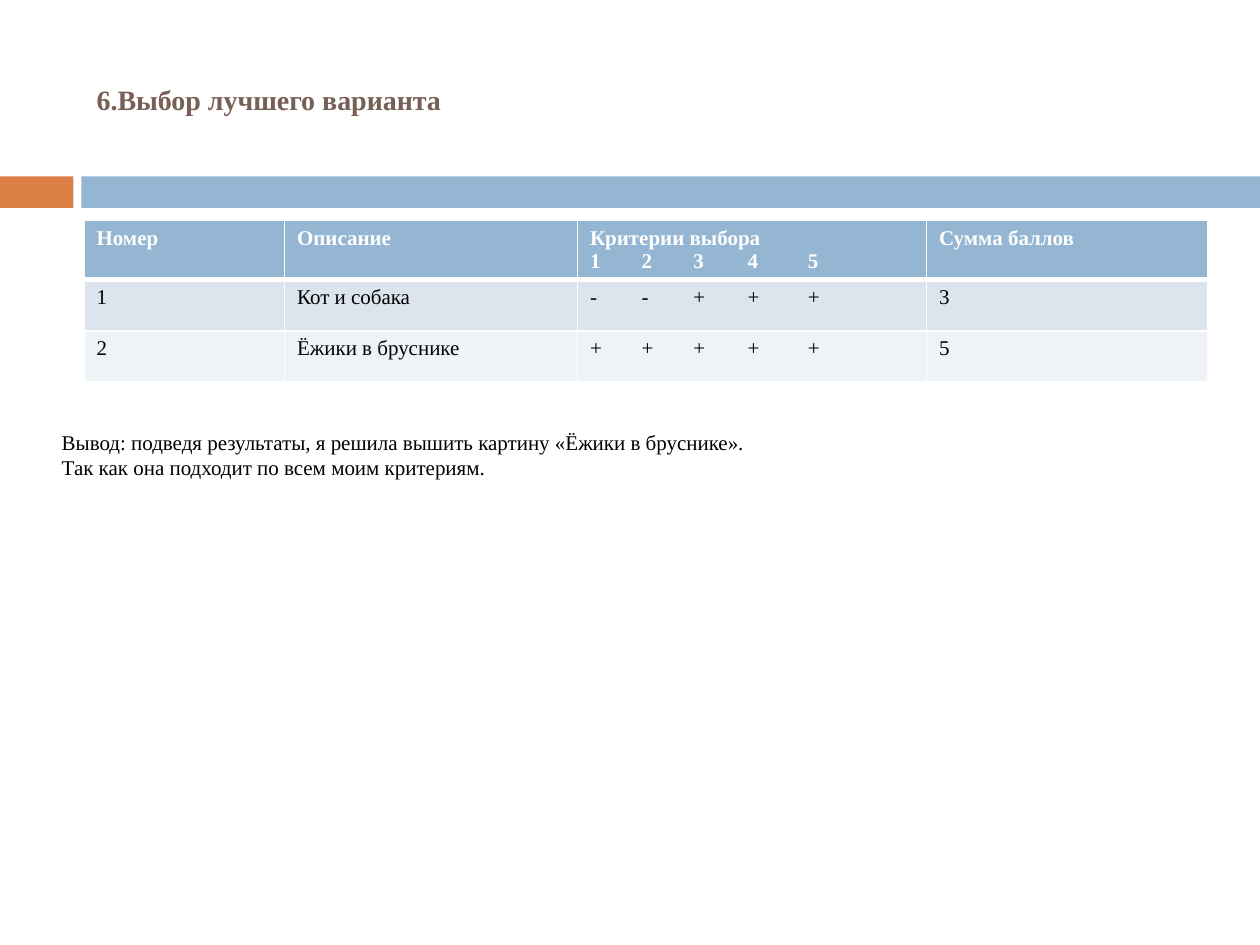
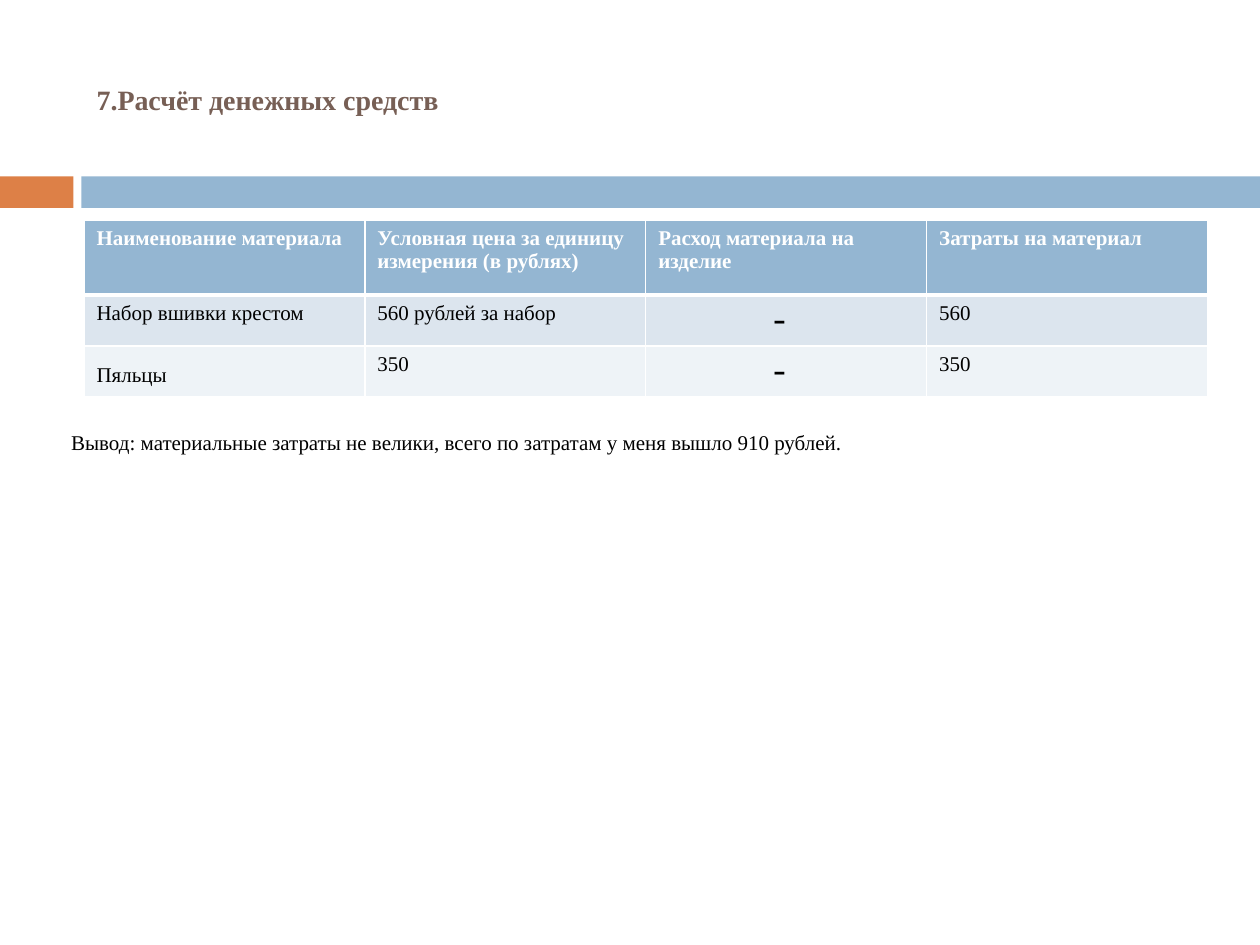
from dataclasses import dataclass
from typing import NamedTuple

from lxml import etree
from pptx import Presentation
from pptx.dml.color import RGBColor
from pptx.enum.shapes import MSO_SHAPE
from pptx.enum.text import MSO_ANCHOR, MSO_AUTO_SIZE, PP_ALIGN
from pptx.oxml.ns import qn
from pptx.util import Emu, Inches, Pt

RECTANGLE = MSO_SHAPE.RECTANGLE
MIDDLE = MSO_ANCHOR.MIDDLE
GROW = MSO_AUTO_SIZE.SHAPE_TO_FIT_TEXT
LEFT = PP_ALIGN.LEFT

# The slide is a grid of 120 columns by 90 rows, each a twelfth of an inch.
COLUMNS, ROWS = 120, 90
CELL = Inches(10) // COLUMNS

ORANGE, BLUE, BROWN = "DD8047", "94B6D2", "775F55"
WHITE, BLACK = "FFFFFF", "000000"
ROW_FILLS = ["DCE5EE", "EEF3F7"]

SERIF, SANS = "Times New Roman", "Cabin"
TITLE_FORMAT = {"name": SERIF, "size": Pt(16), "bold": True}
HEADER_FORMAT = {"name": SERIF, "size": Pt(12), "bold": True}
BODY_FORMAT = {"name": SERIF, "size": Pt(12), "bold": False}
SANS_FORMAT = {"name": SANS, "size": Pt(18), "bold": False}

CRITERIA_TABS = [0.41, 0.82, 1.25, 1.73]
DASH_INDENT = 0.91
THIN, THICK = 1, 3


class Area(NamedTuple):
    """A place on the grid, in columns and rows."""
    left: float
    top: float
    width: float
    height: float


class Band(NamedTuple):
    area: Area
    color: str


@dataclass
class Topic:
    title: str
    column_widths: list[float]
    header_height: float
    table_rows: list[list[str]]
    conclusion: list[str]
    conclusion_left: float


TITLE_AREA = Area(8, 3, 107, 13)
TABLE_LEFT, TABLE_TOP, TABLE_WIDTH = 8, 21, 107
BODY_ROW_HEIGHT = 4.87
CONCLUSION_TOP, CONCLUSION_RIGHT = 40.3, 114.4
BANDS = [
    Band(Area(0, 16.8, 7, 3), ORANGE),
    Band(Area(7.75, 16.8, COLUMNS - 7.75, 3), BLUE),
]

TOPICS = [
    Topic(
        "6.Выбор лучшего варианта",
        [19.1, 27.9, 33.25, 26.75],
        5.65,
        [
            ["Номер", "Описание", "Критерии выбора\n1\t2\t3\t4\t5", "Сумма баллов"],
            ["1", "Кот и собака", "-\t-\t+\t+\t+", "3"],
            ["2", "Ёжики в бруснике", "+\t+\t+\t+\t+", "5"],
        ],
        [
            "Вывод: подведя результаты, я решила вышить картину «Ёжики в бруснике».",
            "Так как она подходит по всем моим критериям.",
        ],
        4.7,
    ),
    Topic(
        "7.Расчёт денежных средств",
        [TABLE_WIDTH / 4] * 4,
        7.1,
        [
            ["Наименование материала", "Условная цена за единицу измерения (в рублях)",
             "Расход материала на изделие", "Затраты на материал"],
            ["Набор вшивки крестом", "560 рублей за набор", "-", "560"],
            ["Пяльцы ", "350", "-", "350"],
        ],
        ["Вывод: материальные затраты не велики, всего по затратам у меня вышло 910 рублей."],
        5.6,
    ),
]


def grid(*lengths: float) -> list[Emu]:
    return [Emu(round(length * CELL)) for length in lengths]


def rgb(color: str) -> RGBColor:
    return RGBColor.from_string(color)


def add_run(paragraph, text: str, format_values: dict, color: str) -> None:
    run = paragraph.add_run()
    run.text = text
    for attribute, value in format_values.items():
        setattr(run.font, attribute, value)
    run.font.color.rgb = rgb(color)


def add_lines(frame, lines: list[str], format_values: dict, color: str) -> None:
    for index, line in enumerate(lines):
        paragraph = frame.add_paragraph() if index else frame.paragraphs[0]
        if "\t" in line:
            set_tabs(paragraph, CRITERIA_TABS)
        add_run(paragraph, line, format_values, color)


def set_tabs(paragraph, stops: list[float]) -> None:
    tabs = etree.SubElement(paragraph._p.get_or_add_pPr(), qn("a:tabLst"))
    for stop in stops:
        etree.SubElement(tabs, qn("a:tab"), pos=str(Inches(stop)), algn="l")


def set_borders(cell, top: int, bottom: int) -> None:
    """Draw white borders; they must come before the fill of the cell."""
    widths = {"a:lnL": THIN, "a:lnR": THIN, "a:lnT": top, "a:lnB": bottom}
    properties = cell._tc.get_or_add_tcPr()
    for index, (tag, width) in enumerate(widths.items()):
        line = etree.Element(qn(tag), w=str(Pt(width)))
        fill = etree.SubElement(line, qn("a:solidFill"))
        etree.SubElement(fill, qn("a:srgbClr"), val=WHITE)
        properties.insert(index, line)


def fill_cell(cell, text: str, row: int) -> None:
    is_header = row == 0
    cell.fill.solid()
    cell.fill.fore_color.rgb = rgb(BLUE if is_header else ROW_FILLS[(row - 1) % 2])
    set_borders(cell, THICK if row == 1 else THIN, THICK if is_header else THIN)
    paragraph = cell.text_frame.paragraphs[0]
    if is_header:
        add_lines(cell.text_frame, text.split("\n"), HEADER_FORMAT, WHITE)
    elif text == "-":
        paragraph._p.get_or_add_pPr().set("marL", str(Inches(DASH_INDENT)))
        add_run(paragraph, text, SANS_FORMAT, BLACK)
    elif text.endswith(" "):
        add_run(paragraph, text.rstrip(), BODY_FORMAT, BLACK)
        add_run(paragraph, " ", SANS_FORMAT, BLACK)
    else:
        add_lines(cell.text_frame, [text], BODY_FORMAT, BLACK)


def add_topic_table(slide, topic: Topic) -> None:
    heights = [topic.header_height] + [BODY_ROW_HEIGHT] * (len(topic.table_rows) - 1)
    area = Area(TABLE_LEFT, TABLE_TOP, TABLE_WIDTH, sum(heights))
    table = slide.shapes.add_table(
        len(heights), len(topic.column_widths), *grid(*area)).table
    for column, width in zip(table.columns, grid(*topic.column_widths)):
        column.width = width
    for row, height in zip(table.rows, grid(*heights)):
        row.height = height
    for row, texts in enumerate(topic.table_rows):
        for column, text in enumerate(texts):
            fill_cell(table.cell(row, column), text, row)


def add_conclusion(slide, topic: Topic) -> None:
    area = Area(topic.conclusion_left, CONCLUSION_TOP,
                CONCLUSION_RIGHT - topic.conclusion_left, 1.2 + 2.4 * len(topic.conclusion))
    frame = slide.shapes.add_textbox(*grid(*area)).text_frame
    frame.word_wrap = True
    frame.auto_size = GROW
    add_lines(frame, topic.conclusion, BODY_FORMAT, BLACK)


def place_title(title) -> None:
    title.left, title.top, title.width, title.height = grid(*TITLE_AREA)
    title.text_frame.vertical_anchor = MIDDLE


def move_bands_to_layout(slide) -> None:
    """Draw the bands once, on the layout that all slides share."""
    for band in BANDS:
        shape = slide.shapes.add_shape(RECTANGLE, *grid(*band.area))
        shape.shadow.inherit = False
        shape.fill.solid()
        shape.fill.fore_color.rgb = rgb(band.color)
        shape.line.fill.background()
        slide.slide_layout.shapes.element.append(shape.element)


def add_topic(presentation, layout, topic: Topic):
    slide = presentation.slides.add_slide(layout)
    title = slide.shapes.title
    place_title(title)
    title.text_frame.paragraphs[0].alignment = LEFT
    add_lines(title.text_frame, [topic.title], TITLE_FORMAT, BROWN)
    add_topic_table(slide, topic)
    add_conclusion(slide, topic)
    return slide


def main() -> None:
    presentation = Presentation()
    presentation.slide_width, presentation.slide_height = grid(COLUMNS, ROWS)
    layout = presentation.slide_layouts.get_by_name("Title Only")
    slides = [add_topic(presentation, layout, topic) for topic in TOPICS]
    move_bands_to_layout(slides[0])
    presentation.save("out.pptx")


if __name__ == "__main__":
    main()
